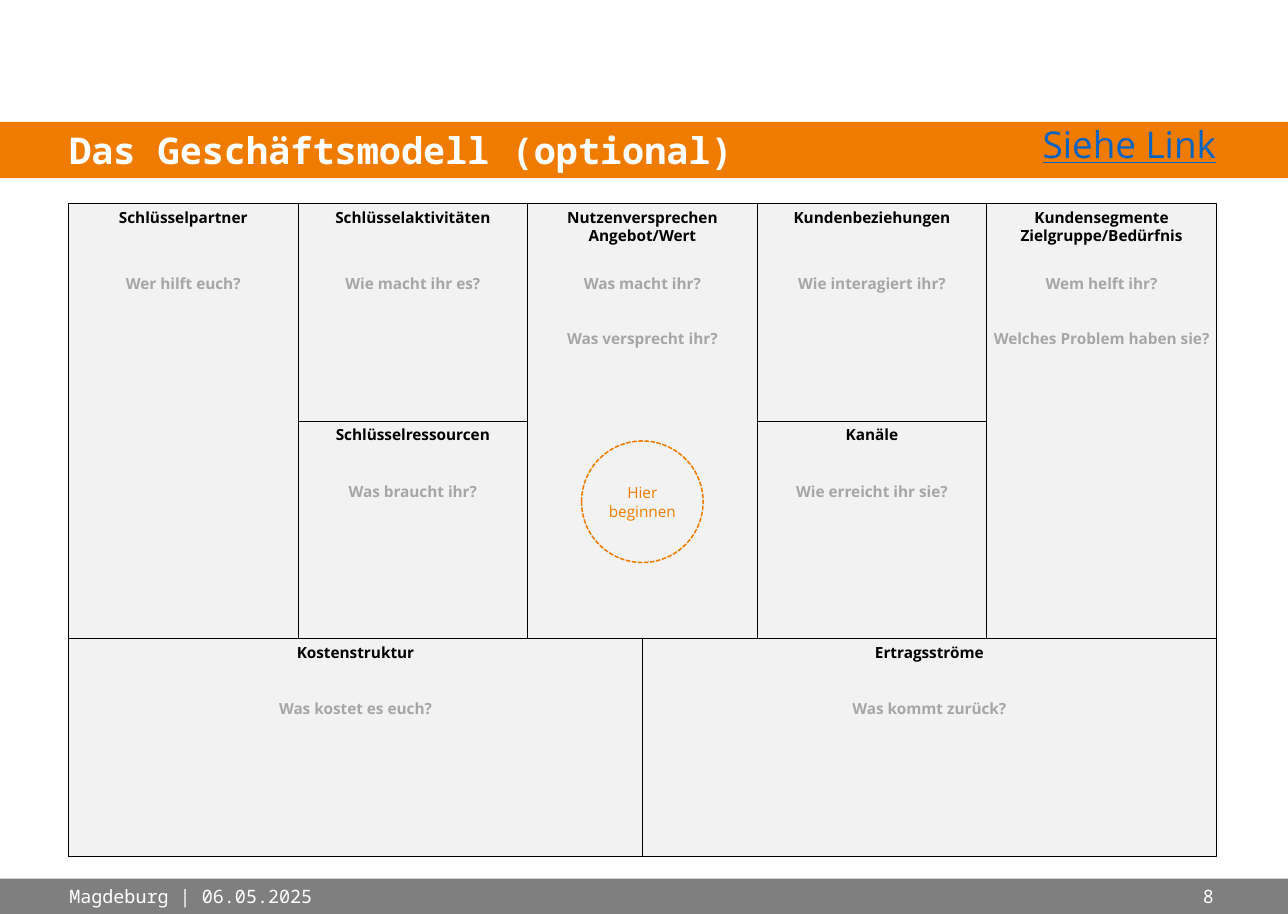
"""Build the business model canvas slide."""
import pptx
import pptx.dml.color
import pptx.enum.dml
import pptx.enum.shapes
import pptx.enum.text
import pptx.util

Pt = pptx.util.Pt
ALIGN = pptx.enum.text.PP_ALIGN
ANCHOR = pptx.enum.text.MSO_ANCHOR
SHAPE = pptx.enum.shapes.MSO_SHAPE
COLORS = {
    "orange": "EF7C00", "footer": "7F7F7F", "cell": "F2F2F2", "hint": "A6A6A6",
    "link": "0563C1", "black": "000000", "white": "FFFFFF",
}
MONO, SANS = "Noto Sans Mono", "Open Sans"
WIDTH, HEIGHT = 838.8, 595.44
GRID_LEFT, GRID_TOP = 44.6, 132.5
COLUMN, ROW = 149.5, 141.75
BAND_TOP, BAND_HEIGHT = 79.4, 36.7
FOOTER_TOP, FOOTER_HEIGHT = 572.4, 23.04
CIRCLE = 79.2
CELL_INSETS = (2.88,) * 4
CELLS = [
    (0, 0, 1, 2, ["Schlüsselpartner"], ["Wer hilft euch?"]),
    (1, 0, 1, 1, ["Schlüsselaktivitäten"], ["Wie macht ihr es?"]),
    (2, 0, 1, 2, ["Nutzenversprechen", "Angebot/Wert"],
     ["Was macht ihr?", "Was versprecht ihr?"]),
    (3, 0, 1, 1, ["Kundenbeziehungen"], ["Wie interagiert ihr?"]),
    (4, 0, 1, 2, ["Kundensegmente", "Zielgruppe/Bedürfnis"],
     ["Wem helft ihr?", "Welches Problem haben sie?"]),
    (1, 1, 1, 1, ["Schlüsselressourcen"], ["Was braucht ihr?"]),
    (3, 1, 1, 1, ["Kanäle"], ["Wie erreicht ihr sie?"]),
    (0, 2, 2.5, 1, ["Kostenstruktur"], ["Was kostet es euch?"]),
    (2.5, 2, 2.5, 1, ["Ertragsströme"], ["Was kommt zurück?"]),
]


def rgb(name):
    return pptx.dml.color.RGBColor.from_string(COLORS[name])


def write(box, lines, size=10, font=SANS, color="black", bold=False, underline=False,
          align=ALIGN.CENTER, anchor=ANCHOR.TOP, insets=(0, 0, 0, 0), gap=0):
    frame = box.text_frame
    frame.word_wrap = True
    frame.vertical_anchor = anchor
    frame.margin_left, frame.margin_top, frame.margin_right, frame.margin_bottom = map(Pt, insets)
    for index, line in enumerate(lines):
        para = frame.add_paragraph() if index else frame.paragraphs[0]
        para.alignment = align
        if index and gap:
            para.space_before = Pt(gap)
        span = para.add_run()
        span.text = line
        span.font.name, span.font.size = font, Pt(size)
        span.font.bold, span.font.underline = bold, underline
        span.font.color.rgb = rgb(color)


def add_panel(page, left, top, width, height, kind=SHAPE.RECTANGLE,
              fill=None, line=None, weight=0.5, dash=None):
    box = page.shapes.add_shape(kind, Pt(left), Pt(top), Pt(width), Pt(height))
    box.shadow.inherit = False
    if fill:
        box.fill.solid()
        box.fill.fore_color.rgb = rgb(fill)
    else:
        box.fill.background()
    if line:
        box.line.color.rgb = rgb(line)
        box.line.width = Pt(weight)
        if dash:
            box.line.dash_style = dash
    else:
        box.line.fill.background()
    return box


def add_text(page, left, top, width, height, lines, **style):
    box = page.shapes.add_textbox(Pt(left), Pt(top), Pt(width), Pt(height))
    write(box, lines, **style)


def add_canvas(page):
    for column, row, columns, rows, heading, hint in CELLS:
        left, top = GRID_LEFT + column * COLUMN, GRID_TOP + row * ROW
        width = columns * COLUMN
        cell = add_panel(page, left, top, width, rows * ROW, fill="cell", line="black")
        write(cell, heading, bold=True, insets=CELL_INSETS)
        offset = 36.7 if row else 43.2
        add_text(page, left, top + offset, width, 70.6, hint, color="hint", bold=True,
                 insets=CELL_INSETS, gap=24)


def add_start_circle(page):
    left = GRID_LEFT + 2.5 * COLUMN - CIRCLE / 2
    circle = add_panel(page, left, 287.3, CIRCLE, CIRCLE, kind=SHAPE.OVAL, line="orange",
                       weight=1, dash=pptx.enum.dml.MSO_LINE.SQUARE_DOT)
    write(circle, ["Hier beginnen"], color="orange", anchor=ANCHOR.MIDDLE)


def add_footer(page):
    add_panel(page, 0, FOOTER_TOP, WIDTH, FOOTER_HEIGHT, fill="footer")
    for left, width, label, align in [
        (45.1, 195.1, "Magdeburg | 06.05.2025", ALIGN.LEFT),
        (734.4, 56.2, "8", ALIGN.RIGHT),
    ]:
        add_text(page, left, FOOTER_TOP, width, FOOTER_HEIGHT, [label], size=12, font=MONO,
                 color="white", align=align, anchor=ANCHOR.MIDDLE)


def main():
    deck = pptx.Presentation()
    deck.slide_width, deck.slide_height = Pt(WIDTH), Pt(HEIGHT)
    page = deck.slides.add_slide(deck.slide_layouts[6])
    add_footer(page)
    title = add_panel(page, 0, BAND_TOP, WIDTH, BAND_HEIGHT, fill="orange")
    write(title, ["Das Geschäftsmodell (optional)"], size=24, font=MONO, color="white",
          bold=True, align=ALIGN.LEFT, anchor=ANCHOR.MIDDLE, insets=(45.1, 0, 0, 0))
    add_canvas(page)
    add_start_circle(page)
    add_text(page, 663.1, BAND_TOP, 144.7, BAND_HEIGHT, ["Siehe Link"], size=24,
             color="link", underline=True)
    deck.save("out.pptx")


if __name__ == "__main__":
    main()
